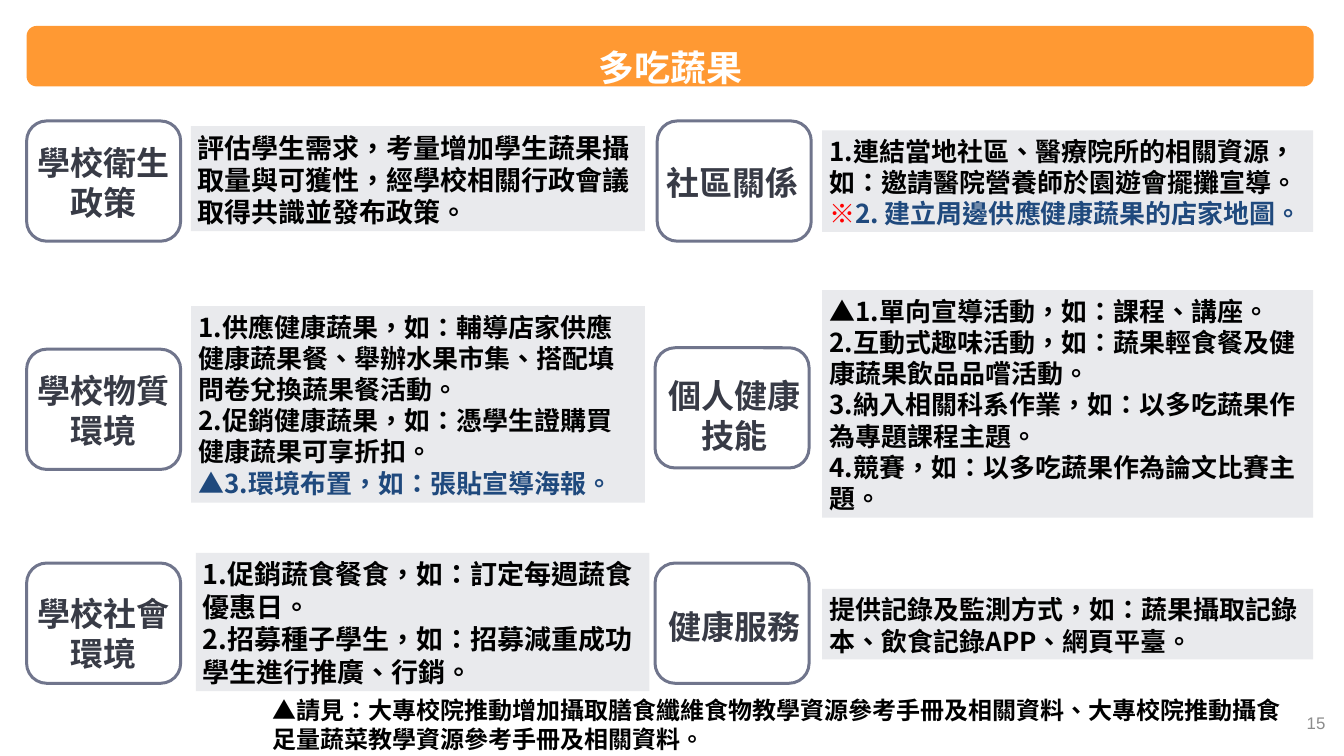
from dataclasses import dataclass
from pptx import Presentation
from pptx.dml.color import RGBColor
from pptx.enum.lang import MSO_LANGUAGE_ID
from pptx.enum.shapes import MSO_SHAPE
from pptx.enum.text import MSO_ANCHOR, PP_ALIGN
from pptx.util import Inches, Pt
from lxml import etree

RECTANGLE = MSO_SHAPE.RECTANGLE
ROUNDED = MSO_SHAPE.ROUNDED_RECTANGLE
LEFT, CENTER, RIGHT = PP_ALIGN.LEFT, PP_ALIGN.CENTER, PP_ALIGN.RIGHT
TOP, MIDDLE = MSO_ANCHOR.TOP, MSO_ANCHOR.MIDDLE
TAIWANESE = MSO_LANGUAGE_ID.TRADITIONAL_CHINESE

WIDTH, HEIGHT = Inches(18.67), Inches(10.5)
CHINESE_FONT, NUMBER_FONT = "Noto Sans CJK SC", "Arial"
ORANGE, PANEL, FRAME = "FF9933", "E9EAED", "70758C"
BLACK, WHITE, SLATE, NAVY, RED, GRAY = "000000", "FFFFFF", "383B46", "1F497D", "FF0000", "8C8C8C"
LINE_PITCH = 1.2
FRAME_SIZE = (11.46, 15.9)
CAPTION_POINTS = 33


@dataclass(frozen=True)
class Area:
    left: float
    top: float
    width: float
    height: float

    def position(self) -> tuple[int, int, int, int]:
        return (int(WIDTH * self.left / 100), int(HEIGHT * self.top / 100),
                int(WIDTH * self.width / 100), int(HEIGHT * self.height / 100))


@dataclass(frozen=True)
class Span:
    text: str
    color: str = BLACK


@dataclass(frozen=True)
class TextStyle:
    points: float
    align: PP_ALIGN = LEFT
    anchor: MSO_ANCHOR = TOP
    font: str = CHINESE_FONT
    bold: bool = True
    pitch: float = LINE_PITCH
    inset: float = 0.07


@dataclass(frozen=True)
class Topic:
    name: str
    frame: tuple[float, float]
    caption: tuple[float, float]
    caption_height: float
    note: Area
    points: float
    paragraphs: list[list[Span]]


ONE_LINE, TWO_LINES = 6.29, 11.52
TOPICS = [
    Topic("學校衛生政策", (1.98, 16), (1.98, 18.19), TWO_LINES,
          Area(14.2, 16.67, 33.78, 13.9), 27,
          [[Span("評估學生需求，考量增加學生蔬果攝取量與可獲性，經學校相關行政會議取得共識並發布政策。")]]),
    Topic("學校物質環境", (1.98, 46.19), (1.98, 48.38), TWO_LINES,
          Area(14.23, 40.48, 33.75, 26), 26,
          [[Span("1.供應健康蔬果，如：輔導店家供應健康蔬果餐、舉辦水果市集、搭配填問卷兌換蔬果餐活動。")],
           [Span("2.促銷健康蔬果，如：憑學生證購買健康蔬果可享折扣。")],
           [Span("▲3.環境布置，如：張貼宣導海報。", NAVY)]]),
    Topic("學校社會環境", (1.98, 74.48), (1.98, 77.9), TWO_LINES,
          Area(14.57, 73.14, 33.75, 18.29), 27,
          [[Span("1.促銷蔬食餐食，如：訂定每週蔬食優惠日。")],
           [Span("2.招募種子學生，如：招募減重成功學生進行推廣、行銷。")]]),
    Topic("社區關係", (48.9, 16), (48.74, 20.86), ONE_LINE,
          Area(61.17, 17.24, 36.53, 13.43), 26,
          [[Span("1.連結當地社區、醫療院所的相關資源，如：邀請醫院營養師於園遊會擺攤宣導。")],
           [Span("※", RED), Span("2. 建立周邊供應健康蔬果的店家地圖。", NAVY)]]),
    Topic("個人健康技能", (48.74, 46), (48.9, 49.05), TWO_LINES,
          Area(61.17, 38.38, 36.53, 30.1), 26,
          [[Span("▲1.單向宣導活動，如：課程、講座。")],
           [Span("2.互動式趣味活動，如：蔬果輕食餐及健康蔬果飲品品嚐活動。")],
           [Span("3.納入相關科系作業，如：以多吃蔬果作為專題課程主題。")],
           [Span("4.競賽，如：以多吃蔬果作為論文比賽主題。")]]),
    Topic("健康服務", (48.74, 74.48), (48.9, 79.52), ONE_LINE,
          Area(61.17, 77.9, 36.53, 9.33), 26,
          [[Span("提供記錄及監測方式，如：蔬果攝取記錄本、飲食記錄APP、網頁平臺。")]]),
]
FOOTNOTE = "▲請見：大專校院推動增加攝取膳食纖維食物教學資源參考手冊及相關資料、大專校院推動攝食足量蔬菜教學資源參考手冊及相關資料。"


def color_of(code: str) -> RGBColor:
    return RGBColor.from_string(code)


def apply(target, values: dict) -> None:
    for name, value in values.items():
        setattr(target, name, value)


def write(box, paragraphs: list[list[Span]], style: TextStyle) -> None:
    frame = box.text_frame
    apply(frame, {"word_wrap": True, "vertical_anchor": style.anchor,
                  "margin_left": Inches(0.1), "margin_right": Inches(0.1),
                  "margin_top": Inches(style.inset), "margin_bottom": Inches(0.03)})
    for index, spans in enumerate(paragraphs):
        para = frame.add_paragraph() if index else frame.paragraphs[0]
        apply(para, {"alignment": style.align, "line_spacing": Pt(style.points * style.pitch)})
        for span in spans:
            run = para.add_run()
            run.text = span.text
            apply(run.font, {"size": Pt(style.points), "bold": style.bold,
                             "name": style.font, "language_id": TAIWANESE})
            run.font.color.rgb = color_of(span.color)
            latin = run.font._element.find("{*}latin")
            east_asian = etree.Element(latin.tag.replace("latin", "ea"), typeface=style.font)
            latin.addnext(east_asian)


def add_panel(page, kind: MSO_SHAPE, area: Area, fill: str = "", line: str = ""):
    box = page.shapes.add_shape(kind, *area.position())
    box.shadow.inherit = False
    if fill:
        box.fill.solid()
        box.fill.fore_color.rgb = color_of(fill)
    else:
        box.fill.background()
    if line:
        box.line.color.rgb = color_of(line)
        box.line.width = Pt(3)
    else:
        box.line.fill.background()
    return box


def add_text(page, area: Area, span: Span, style: TextStyle) -> None:
    write(page.shapes.add_textbox(*area.position()), [[span]], style)


def draw_topic(page, topic: Topic) -> None:
    add_panel(page, ROUNDED, Area(*topic.frame, *FRAME_SIZE), line=FRAME)
    add_text(page, Area(*topic.caption, FRAME_SIZE[0], topic.caption_height),
             Span(topic.name, SLATE), TextStyle(CAPTION_POINTS, CENTER))
    note = add_panel(page, RECTANGLE, topic.note, fill=PANEL)
    write(note, topic.paragraphs, TextStyle(topic.points))


def main() -> None:
    deck = Presentation()
    apply(deck, {"slide_width": WIDTH, "slide_height": HEIGHT})
    page = deck.slides.add_slide(deck.slide_layouts[6])
    title = add_panel(page, ROUNDED, Area(1.98, 3.43, 95.77, 8), fill=ORANGE)
    write(title, [[Span("多吃蔬果", WHITE)]], TextStyle(36, CENTER, pitch=1.44, inset=0.11))
    for topic in TOPICS:
        draw_topic(page, topic)
    add_text(page, Area(19.76, 91.33, 76.65, 8.67), Span(FOOTNOTE), TextStyle(24))
    add_text(page, Area(96.41, 93.14, 2.73, 4.86), Span("15", GRAY),
             TextStyle(16.8, RIGHT, MIDDLE, NUMBER_FONT, False, inset=0.05))
    deck.save("out.pptx")


if __name__ == "__main__":
    main()
